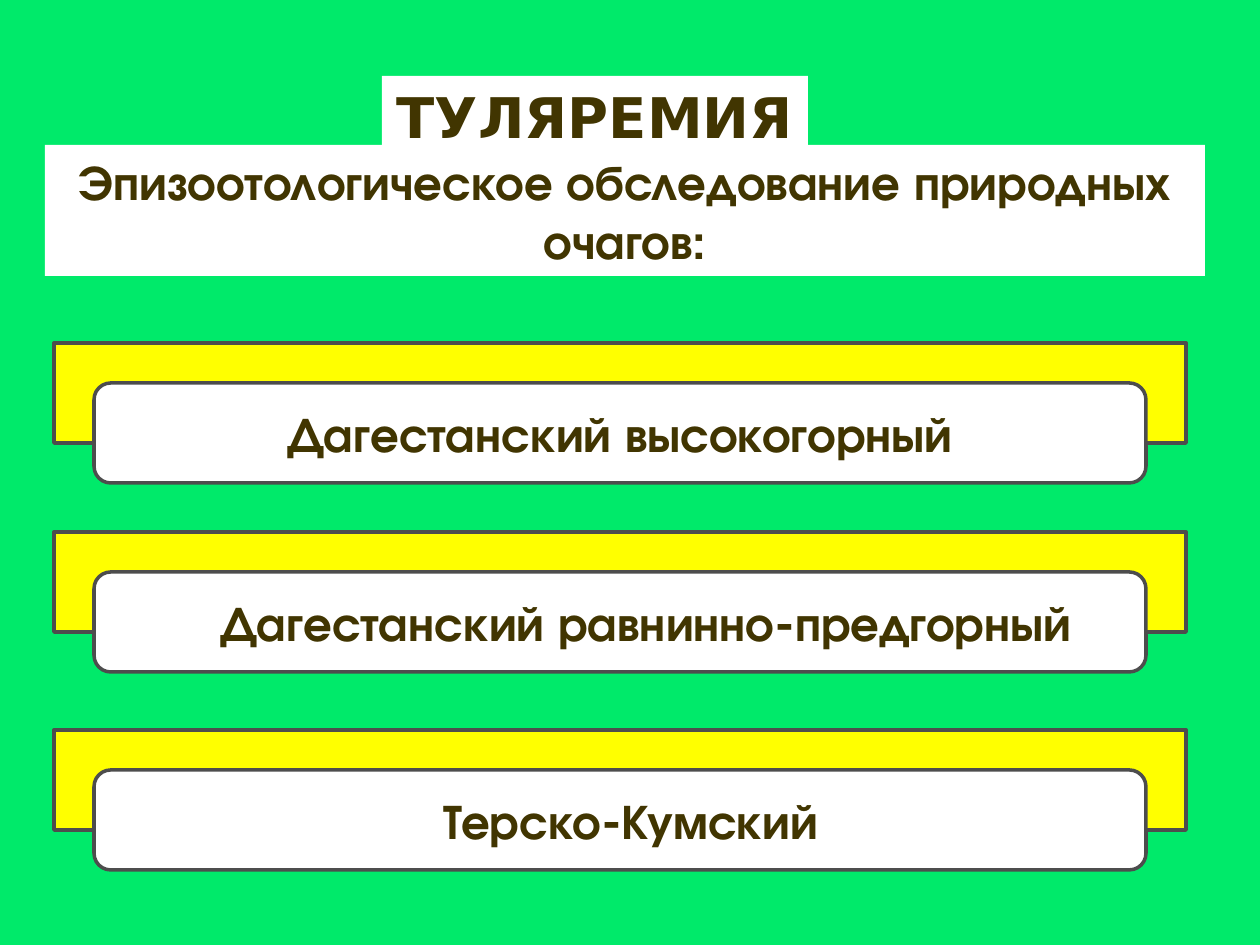
from dataclasses import dataclass

from pptx import Presentation
from pptx.dml.color import RGBColor
from pptx.enum.shapes import MSO_SHAPE
from pptx.enum.text import MSO_ANCHOR, PP_ALIGN
from pptx.util import Emu, Pt

EMU_PER_PX = 914400 // 126
RECT = MSO_SHAPE.RECTANGLE
ROUNDED = MSO_SHAPE.ROUNDED_RECTANGLE
TOP = MSO_ANCHOR.TOP
MIDDLE = MSO_ANCHOR.MIDDLE
CENTER = PP_ALIGN.CENTER


@dataclass(frozen=True)
class Theme:
    background: RGBColor = RGBColor(0x00, 0xEA, 0x6A)
    panel: RGBColor = RGBColor(0xFF, 0xFF, 0xFF)
    accent: RGBColor = RGBColor(0xFF, 0xFF, 0x00)
    outline: RGBColor = RGBColor(0x4D, 0x4D, 0x4D)
    ink: RGBColor = RGBColor(0x41, 0x35, 0x01)
    title_font: str = "DejaVu Sans"
    body_font: str = "TeX Gyre Adventor"
    title_size: int = 32
    body_size: int = 28
    accent_line: float = 2.25
    panel_line: float = 2


THEME = Theme()


def px(length):
    return Emu(length * EMU_PER_PX)


def add_panel(slide, kind, box, fill, line_width=None):
    panel = slide.shapes.add_shape(kind, *map(px, box))
    panel.shadow.inherit = False
    panel.fill.solid()
    panel.fill.fore_color.rgb = fill
    if line_width is None:
        panel.line.fill.background()
    else:
        panel.line.color.rgb = THEME.outline
        panel.line.width = Pt(line_width)
    return panel


def write_text(panel, text, font, size, anchor, wrap=True, indent=0):
    frame = panel.text_frame
    frame.word_wrap = wrap
    frame.vertical_anchor = anchor
    frame.margin_left += px(indent)
    paragraph = frame.paragraphs[0]
    paragraph.text = text
    paragraph.alignment = CENTER
    paragraph.font.name = font
    paragraph.font.size = Pt(size)
    paragraph.font.bold = True
    paragraph.font.color.rgb = THEME.ink


def add_heading(slide):
    title = add_panel(slide, RECT, (382, 76, 426, 131), THEME.panel)
    write_text(title, "ТУЛЯРЕМИЯ", THEME.title_font, THEME.title_size,
               TOP, wrap=False)
    subtitle = add_panel(slide, RECT, (45, 145, 1160, 131), THEME.panel)
    write_text(subtitle, "Эпизоотологическое обследование природных очагов:",
               THEME.body_font, THEME.body_size, TOP)


def add_focus(slide, top, name, indent):
    add_panel(slide, RECT, (54, top, 1132, 100), THEME.accent,
              THEME.accent_line)
    label = add_panel(slide, ROUNDED, (94, top + 40, 1052, 100), THEME.panel,
                      THEME.panel_line)
    write_text(label, name, THEME.body_font, THEME.body_size, MIDDLE,
               indent=indent)


def main():
    presentation = Presentation()
    presentation.slide_width = px(1260)
    presentation.slide_height = px(945)
    slide = presentation.slides.add_slide(presentation.slide_layouts[6])
    slide.background.fill.solid()
    slide.background.fill.fore_color.rgb = THEME.background

    add_heading(slide)
    natural_foci = (
        (343, "Дагестанский высокогорный", 0),
        (532, "Дагестанский равнинно-предгорный", 52),
        (730, "Терско-Кумский", 22),
    )
    for top, name, indent in natural_foci:
        add_focus(slide, top, name, indent)

    presentation.save("out.pptx")


if __name__ == "__main__":
    main()
